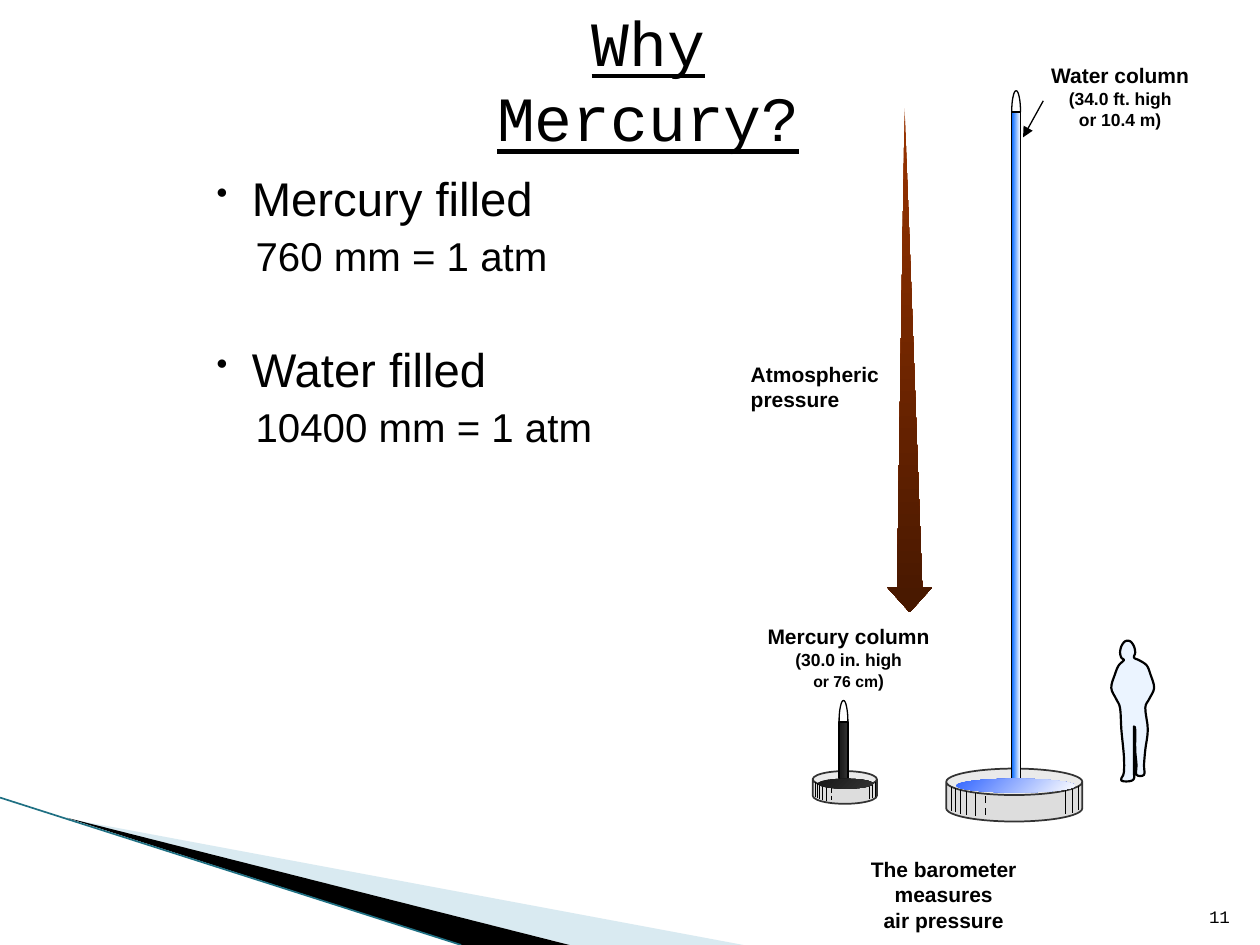
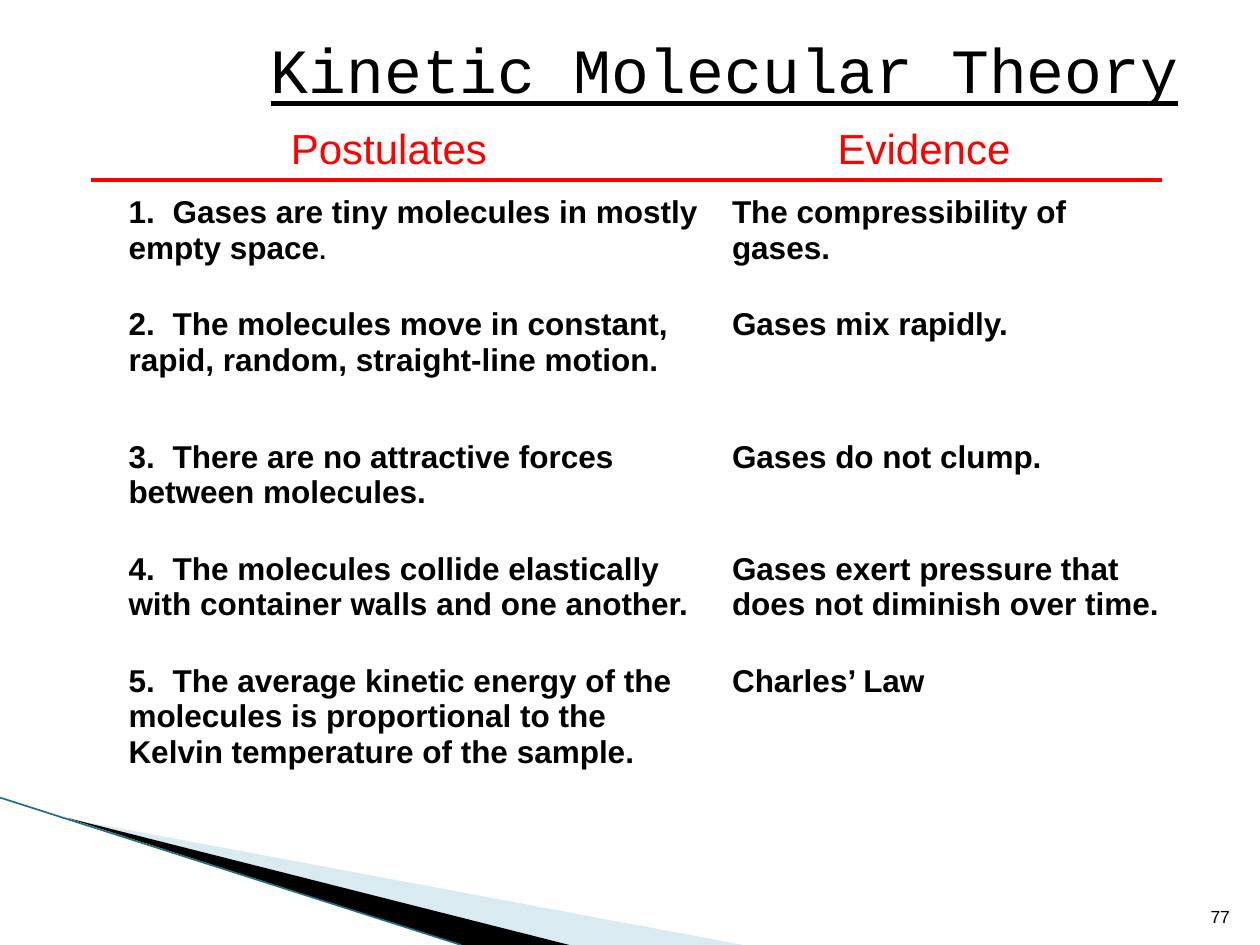
import math
from lxml import etree
from pptx import Presentation
from pptx import util as u
from pptx.dml.color import RGBColor
from pptx.enum import shapes, text
from pptx.oxml import ns

BLACK = RGBColor(0x00, 0x00, 0x00)
RED = RGBColor(0xFF, 0x00, 0x00)
WHITE = RGBColor(0xFF, 0xFF, 0xFF)
BAND_BLUE = RGBColor(0xA0, 0xCB, 0xDC)
BAND_EDGE = RGBColor(0x1F, 0x70, 0x83)
DISH_GREY = RGBColor(0xDD, 0xDD, 0xDD)
DISH_EDGE = RGBColor(0x33, 0x33, 0x33)
WATER_TUBE = RGBColor(0x00, 0x66, 0xFF)
WATER_POOL = RGBColor(0x33, 0x66, 0xFF)
MERCURY = RGBColor(0x18, 0x18, 0x18)
RUST = RGBColor(0x99, 0x33, 0x00)
DARK_RUST = RGBColor(0x47, 0x18, 0x00)
PERSON_BLUE = RGBColor(0xEB, 0xF4, 0xFF)

SANS, MONO = "Arial", "Courier New"
LEFT, CENTER, RIGHT = text.PP_ALIGN.LEFT, text.PP_ALIGN.CENTER, text.PP_ALIGN.RIGHT

DISH_WIDTH, DISH_HEIGHT = 1.08, 0.42
FAINT_TICKS = (0.04, 0.07, 1.05)
SOLID_TICKS = (0.11, 0.16, 0.23, 0.95, 1.0)
DASHED_TICK = 0.31

# Each body level: drop below the crown, shift from the midline, half width.
TORSO = {
    "crown": (0, -0.04, 0.02), "brow": (0.04, -0.04, 0.05),
    "chin": (0.09, -0.04, 0.06), "neck": (0.13, -0.04, 0.05),
    "collar": (0.15, -0.01, 0.06), "shoulder": (0.19, 0, 0.11),
    "arm": (0.26, 0, 0.14), "elbow": (0.37, 0, 0.17),
    "wrist": (0.46, 0, 0.13), "hip": (0.53, 0, 0.1),
}
FRONT_LEG = {
    "thigh": (0.7, -0.04, 0.05), "knee": (0.91, -0.03, 0.04),
    "ankle": (1.04, -0.03, 0.04), "toe": (1.09, -0.04, 0.05),
    "sole": (1.11, -0.05, 0.03),
}
BACK_LEG = {
    "thigh": (0.7, 0.07, 0.05), "knee": (0.86, 0.06, 0.04),
    "ankle": (0.98, 0.06, 0.03), "sole": (1.06, 0.06, 0.03),
}
CROTCH = (0.01, 0.68)

POSTULATES = [
    (0.89, [("1.\tGases are tiny molecules in mostly empty space", 18), (".", 14)],
     "The compressibility of gases."),
    (1.05, "2.\tThe molecules move in constant, rapid, random, straight-line motion.",
     "Gases mix rapidly."),
    (0.89, "3.\tThere are no attractive forces between molecules.", "Gases do not clump."),
    (0.89, "4.\tThe molecules collide elastically with container walls and one another.",
     "Gases exert pressure that does not diminish over time."),
    (1.07, "5.\tThe average kinetic energy of the molecules is proportional to the "
     "Kelvin temperature of the sample.", "Charles’ Law"),
]


def inches(values):
    return [u.Inches(value) for value in values]


def write(frame, paragraphs, size=12, font=SANS, color=BLACK, bold=False,
          underline=False, align=LEFT):
    for index, content in enumerate(paragraphs):
        paragraph = frame.paragraphs[0] if index == 0 else frame.add_paragraph()
        paragraph.alignment = align
        runs = [(content, size)] if isinstance(content, str) else content
        for words, run_size in runs:
            run = paragraph.add_run()
            run.text = words
            run.font.name = font
            run.font.size = u.Pt(run_size)
            run.font.bold = bold
            run.font.underline = underline
            run.font.color.rgb = color


def add_text(slide, box, paragraphs, wrap=True, anchor=text.MSO_ANCHOR.TOP, **style):
    frame = slide.shapes.add_textbox(*inches(box)).text_frame
    frame.word_wrap = wrap
    frame.vertical_anchor = anchor
    write(frame, paragraphs, **style)
    return frame


def add_label(slide, box, paragraphs, align=CENTER, wrap=False):
    add_text(slide, box, paragraphs, wrap=wrap, bold=True, align=align)


def sub_element(parent, tag, **attributes):
    return etree.SubElement(parent, ns.qn(tag), **attributes)


def paint(shape, fill=None, gradient=None, angle=0, edge=None, weight=0.75):
    shape.shadow.inherit = False
    if gradient:
        shape.fill.gradient()
        shape.fill.gradient_angle = angle
        for stop, color in zip(shape.fill.gradient_stops, gradient):
            stop.color.rgb = color
    elif fill is not None:
        shape.fill.solid()
        shape.fill.fore_color.rgb = fill
    else:
        shape.fill.background()
    if edge is None:
        shape.line.fill.background()
    else:
        shape.line.color.rgb = edge
        shape.line.width = u.Pt(weight)
    return shape


def add_preset(slide, kind, box, **look):
    return paint(slide.shapes.add_shape(kind, *inches(box)), **look)


def add_outline(slide, points, close=True, **look):
    corners = [tuple(inches(point)) for point in points]
    builder = slide.shapes.build_freeform(*corners[0])
    builder.add_line_segments(corners[1:], close=close)
    return paint(builder.convert_to_shape(), **look)


def add_line(slide, start, end, color=BLACK, weight=0.75, arrow=False):
    line = slide.shapes.add_connector(shapes.MSO_CONNECTOR.STRAIGHT,
                                      *inches(start + end))
    line.line.color.rgb = color
    line.line.width = u.Pt(weight)
    if arrow:
        sub_element(line.line._get_or_add_ln(), "a:tailEnd", type="triangle")
    sub_element(line._element.spPr, "a:effectLst")


def add_bands(slide):
    pale = add_outline(slide, [(0.55, 6.5), (5.9, 7.5), (4.52, 7.5)], fill=BAND_BLUE)
    tint = pale._element.spPr.find(".//" + ns.qn("a:srgbClr"))
    sub_element(tint, "a:alpha", val="40000")
    add_outline(slide, [(0.53, 6.49), (4.52, 7.5), (3.66, 7.5)], fill=BLACK)
    add_line(slide, (0, 6.33), (3.66, 7.5), BAND_EDGE, 0.95)


def start_slide(deck, title, title_box, number, number_font):
    slide = deck.slides.add_slide(deck.slide_layouts[6])
    slide.background.fill.solid()
    slide.background.fill.fore_color.rgb = WHITE
    add_bands(slide)
    add_text(slide, (9.46, 7.01, 0.4, 0.4), [number], size=10, font=number_font,
             align=RIGHT, anchor=text.MSO_ANCHOR.BOTTOM)
    add_text(slide, title_box, [title], size=36, font=MONO, underline=True,
             align=CENTER, anchor=text.MSO_ANCHOR.MIDDLE)
    return slide


def add_readings(slide):
    frame = add_text(slide, (1.5, 1.29, 3.92, 4.95), [
        [("Mercury filled", 27)], [("760 mm = 1 atm", 23)],
        [("Water filled", 27)], [("10400 mm = 1 atm", 23)],
    ])
    for index, paragraph in enumerate(frame.paragraphs):
        properties = paragraph._p.get_or_add_pPr()
        if index % 2 == 0:
            properties.set("marL", str(u.Inches(0.4)))
            properties.set("indent", str(u.Inches(-0.28)))
            sub_element(properties, "a:buSzPct", val="68000")
            sub_element(properties, "a:buChar", char="•")
        else:
            properties.set("marL", str(u.Inches(0.43)))
            paragraph.space_before = u.Pt(3.2)
    frame.paragraphs[2].space_before = u.Pt(34.5)


def add_dish(slide, left, top, width, height):
    dish = add_preset(slide, shapes.MSO_SHAPE.CAN, (left, top, width, height),
                      fill=DISH_GREY, edge=DISH_EDGE, weight=1)
    dish.adjustments[0] = 0.5
    rim_radius, wall = height / 4, height * 0.45

    def add_tick(offset, weight, start=0.0, end=1.0):
        across = offset / DISH_WIDTH
        rim = top + rim_radius * (1 + math.sqrt(1 - (2 * across - 1) ** 2))
        x = left + across * width
        add_line(slide, (x, rim + start * wall), (x, rim + end * wall), weight=weight)

    for offset in FAINT_TICKS:
        add_tick(offset, 0.25)
    for offset in SOLID_TICKS:
        add_tick(offset, 0.5)
    for start, end in ((0.1, 0.4), (0.6, 0.9)):
        add_tick(DASHED_TICK, 0.5, start, end)


def add_tube_tip(slide, left, base, width, height=0.17, steps=16):
    angles = [math.pi * step / steps for step in range(steps + 1)]
    dome = [(left + width * (1 - math.cos(angle)) / 2, base - height * math.sin(angle))
            for angle in angles]
    add_outline(slide, dome, close=False, edge=BLACK)


def add_barometer(slide, dish, tube, pool, tube_colors, pool_colors):
    add_dish(slide, *dish)
    add_preset(slide, shapes.MSO_SHAPE.RECTANGLE, tube, gradient=tube_colors, edge=BLACK)
    add_preset(slide, shapes.MSO_SHAPE.OVAL, pool, gradient=pool_colors, angle=315)
    left, top, width, _ = tube
    add_tube_tip(slide, left, top, width)


def add_pressure_arrow(slide, center, top, neck, bottom, shaft=0.1, head=0.18):
    left_side = [(center - shaft, neck), (center - head, neck)]
    right_side = [(center + head, neck), (center + shaft, neck)]
    add_outline(slide, [(center - 0.04, top), *left_side, (center, bottom), *right_side],
                gradient=(RUST, DARK_RUST), angle=270)


def body_edge(levels, side):
    return [(shift + side * half_width, drop)
            for drop, shift, half_width in levels.values()]


def smooth(points, steps=4):
    curve = []
    for index, here in enumerate(points):
        before, after = points[index - 1], points[(index + 1) % len(points)]
        beyond = points[(index + 2) % len(points)]
        for t in (step / steps for step in range(steps)):
            curve.append(tuple(
                b + t * ((c - a) + t * ((2 * a - 5 * b + 4 * c - d)
                                        + t * (3 * b - a - 3 * c + d))) / 2
                for a, b, c, d in zip(before, here, after, beyond)))
    return curve


def add_person(slide, midline, crown):
    down_front = body_edge(TORSO, -1) + body_edge(FRONT_LEG, -1)
    inner_legs = body_edge(FRONT_LEG, 1)[::-1] + [CROTCH] + body_edge(BACK_LEG, -1)
    up_back = body_edge(BACK_LEG, 1)[::-1] + body_edge(TORSO, 1)[::-1]
    silhouette = [(midline + x, crown + y)
                  for x, y in smooth(down_front + inner_legs + up_back)]
    add_outline(slide, silhouette, fill=PERSON_BLUE, edge=BLACK, weight=1.25)


def build_mercury_slide(deck):
    slide = start_slide(deck, "Why Mercury?", (3.25, 0, 3.79, 1.25), "11", MONO)
    add_readings(slide)
    add_label(slide, (6.69, 6.75, 1.6, 0.7), ["The barometer measures", "air pressure"],
              wrap=True)
    add_label(slide, (8.24, 0.45, 1.3, 0.63),
              ["Water column", [("(34.0 ft. high", 10)], [("or 10.4 m)", 10)]])
    add_label(slide, (5.86, 2.82, 1.22, 0.5), ["Atmospheric", "pressure"], align=LEFT)
    add_label(slide, (5.99, 4.9, 1.49, 0.63),
              ["Mercury column", [("(30.0 in. high", 10)], [("or 76 cm", 9), (")", 10)]])
    add_line(slide, (8.28, 0.8), (8.12, 1.09), arrow=True)
    add_barometer(slide, dish=(7.51, 6.1, DISH_WIDTH, DISH_HEIGHT),
                  tube=(8.03, 0.89, 0.07, 5.3), pool=(7.59, 6.18, 0.94, 0.11),
                  tube_colors=(WATER_TUBE, WHITE), pool_colors=(WATER_POOL, WHITE))
    add_barometer(slide, dish=(6.45, 6.12, 0.51, 0.26),
                  tube=(6.66, 5.73, 0.07, 0.45), pool=(6.49, 6.18, 0.44, 0.08),
                  tube_colors=(MERCURY, DISH_EDGE), pool_colors=(MERCURY, DISH_EDGE))
    add_pressure_arrow(slide, center=7.22, top=0.86, neck=4.66, bottom=4.86)
    add_person(slide, midline=8.99, crown=5.09)


def add_postulates(slide):
    table = slide.shapes.add_table(len(POSTULATES), 2,
                                   *inches((0.92, 1.5, 8.45, 4.79))).table
    table.first_row = False
    table.horz_banding = False
    for column, width in zip(table.columns, (4.79, 3.66)):
        column.width = u.Inches(width)
    for row, (height, *contents) in zip(table.rows, POSTULATES):
        row.height = u.Inches(height)
        for cell, content in zip(row.cells, contents):
            cell.fill.background()
            write(cell.text_frame, [content], size=18, bold=True)
        numbered = row.cells[0].text_frame.paragraphs[0]
        stops = sub_element(numbered._p.get_or_add_pPr(), "a:tabLst")
        sub_element(stops, "a:tab", pos=str(u.Inches(0.35)), algn="l")


def build_theory_slide(deck):
    slide = start_slide(deck, "Kinetic Molecular Theory", (1.5, 0.17, 8.5, 0.75),
                        "77", SANS)
    for heading, left, width in (("Postulates", 2.21, 1.76), ("Evidence", 6.55, 1.57)):
        add_text(slide, (left, 0.92, width, 0.5), [heading], wrap=False, size=24,
                 color=RED)
    add_line(slide, (0.72, 1.43), (9.22, 1.43), RED, 2.5)
    add_postulates(slide)


def main():
    deck = Presentation()
    deck.slide_width, deck.slide_height = inches((10, 7.5))
    build_mercury_slide(deck)
    build_theory_slide(deck)
    deck.save("out.pptx")


if __name__ == "__main__":
    main()
